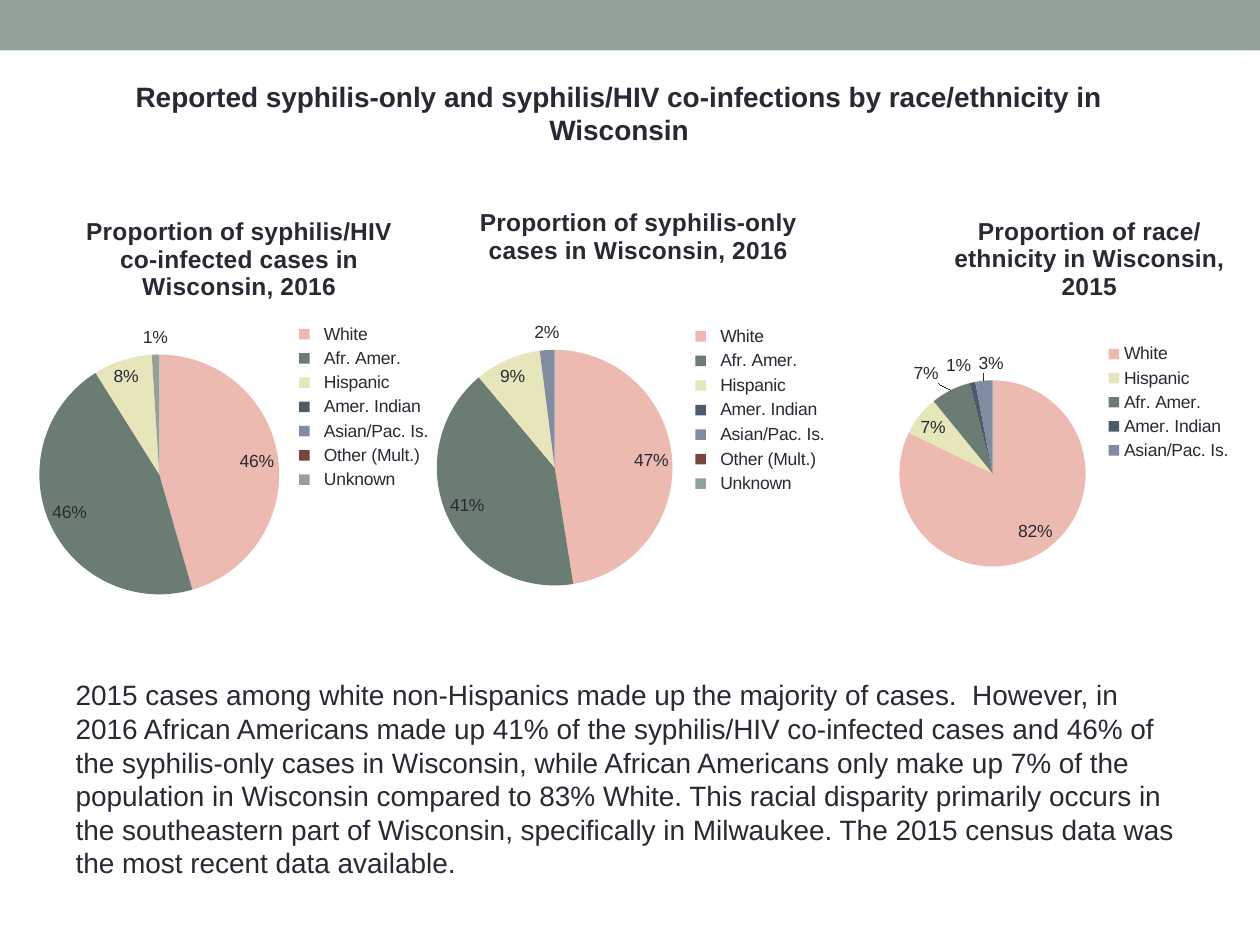
import pptx
import pptx.chart.data
import pptx.dml.color
import pptx.enum.chart
import pptx.enum.shapes
import pptx.enum.text
import pptx.oxml
import pptx.util
from pptx.util import Cm, Pt

FONT = "Arial"
INK = "292934"
SAGE = "93A299"

HEADING = "Reported syphilis-only and syphilis/HIV co-infections by race/ethnicity in Wisconsin"
BODY = (
    "2015 cases among white non-Hispanics made up the majority of cases.  However, in 2016 "
    "African Americans made up 41% of the syphilis/HIV co-infected cases and 46% of the "
    "syphilis-only cases in Wisconsin, while African Americans only make up 7% of the population "
    "in Wisconsin compared to 83% White. This racial disparity primarily occurs in the "
    "southeastern part of Wisconsin, specifically in Milwaukee. The 2015 census data was the "
    "most recent data available."
)

GROUP_COLORS = {
    "White": "EDBAB1",
    "Afr. Amer.": "6B7D72",
    "Hispanic": "E7E5BA",
    "Amer. Indian": "4C5A6A",
    "Asian/Pac. Is. ": "808DA0",
    "Other (Mult.)": "79463D",
    "Unknown": SAGE,
}
CASE_GROUPS = list(GROUP_COLORS)
CENSUS_GROUPS = ["White", "Hispanic", "Afr. Amer.", "Amer. Indian", "Asian/Pac. Is. "]

CHARTS = [
    {
        "title": "Proportion of syphilis/HIV co-infected cases in Wisconsin, 2016",
        "groups": CASE_GROUPS, "indent": "  ", "values": [46, 46, 8, 0, 0, 0, 1],
        "format": "0%;;", "box": (0.43, 3.81, 8.69, 8.79),
        "title_at": (0.14, 0.05), "pie": (0.04, 0.38, 0.56, 0.55),
        "legend": (0.64, 0.3, 0.32, 0.4),
    },
    {
        "title": "Proportion of race/ethnicity in Wisconsin, 2015",
        "groups": CENSUS_GROUPS, "indent": "", "values": [83, 7, 7, 1, 3],
        "format": "0%", "box": (17.35, 3.81, 7.82, 8.69),
        "title_at": (0.23, 0.05), "pie": (0.1, 0.44, 0.48, 0.44),
        "legend": (0.63, 0.35, 0.34, 0.29),
    },
    {
        "title": "Proportion of syphilis-only cases in Wisconsin, 2016",
        "groups": CASE_GROUPS, "indent": "  ", "values": [47, 41, 9, 0, 2, 0, 0],
        "format": "0%", "box": (8.46, 3.81, 8.64, 8.92),
        "title_at": (0.13, 0.03), "pie": (0.04, 0.36, 0.55, 0.54),
        "legend": (0.64, 0.3, 0.32, 0.4),
    },
]


def color(value):
    return pptx.dml.color.RGBColor.from_string(value)


def style_font(font, size, bold=False):
    font.name = FONT
    font.size = Pt(size)
    font.bold = bold
    font.color.rgb = color(INK)


def fill_placeholder(shape, text, box, alignment, bold=False):
    shape.left, shape.top, shape.width, shape.height = map(Cm, box)
    frame = shape.text_frame
    frame.text = text
    frame.word_wrap = True
    frame.auto_size = pptx.enum.text.MSO_AUTO_SIZE.NONE
    frame.vertical_anchor = pptx.enum.text.MSO_ANCHOR.TOP
    paragraph = frame.paragraphs[0]
    paragraph.alignment = alignment
    style_font(paragraph.font, 16, bold)
    return paragraph


def remove_bullet(paragraph):
    properties = paragraph._p.get_or_add_pPr()
    properties.set("marL", "0")
    properties.set("indent", "0")
    properties.insert_element_before(
        pptx.oxml.parse_xml(f"<a:buNone {pptx.oxml.ns.nsdecls('a')}/>"),
        "a:tabLst", "a:defRPr", "a:extLst")


def set_layout(element, fractions, successors, inner=False):
    names = ("x", "y", "w", "h")[:len(fractions)]
    parts = '<c:layoutTarget val="inner"/>' if inner else ""
    parts += "".join(f'<c:{name}Mode val="edge"/>' for name in names[:2])
    parts += "".join(f'<c:{name} val="{value}"/>' for name, value in zip(names, fractions))
    for previous in element.findall(pptx.oxml.ns.qn("c:layout")):
        element.remove(previous)
    layout = pptx.oxml.parse_xml(
        f"<c:layout {pptx.oxml.ns.nsdecls('c')}><c:manualLayout>{parts}</c:manualLayout></c:layout>")
    element.insert_element_before(layout, *successors)


def add_pie(slide, item):
    data = pptx.chart.data.CategoryChartData()
    data.categories = [item["indent"] + group for group in item["groups"]]
    data.add_series("Series 1", item["values"])
    chart = slide.shapes.add_chart(
        pptx.enum.chart.XL_CHART_TYPE.PIE, *map(Cm, item["box"]), data).chart
    style_font(chart.font, 10)

    chart.has_title = True
    title = chart.chart_title
    title.text_frame.text = item["title"]
    style_font(title.text_frame.paragraphs[0].font, 14, bold=True)
    title.include_in_layout = False
    set_layout(title._element, item["title_at"], ("c:overlay", "c:spPr", "c:txPr"))

    chart.has_legend = True
    chart.legend.position = pptx.enum.chart.XL_LEGEND_POSITION.RIGHT
    chart.legend.include_in_layout = False
    style_font(chart.legend.font, 10)
    set_layout(chart.legend._element, item["legend"], ("c:overlay", "c:spPr", "c:txPr"))

    plot = chart.plots[0]
    plot.vary_by_categories = True
    set_layout(chart._chartSpace.chart.plotArea, item["pie"], ("c:pieChart",), inner=True)
    for index, group in enumerate(item["groups"]):
        point_format = plot.series[0].points[index].format
        point_format.fill.solid()
        point_format.fill.fore_color.rgb = color(GROUP_COLORS[group])
        point_format.line.fill.background()

    labels = plot.series[0].data_labels
    labels.show_percentage = True
    labels.show_value = False
    labels.number_format = item["format"]
    labels.number_format_is_linked = False
    labels.position = pptx.enum.chart.XL_LABEL_POSITION.BEST_FIT
    style_font(labels.font, 10)


def main():
    presentation = pptx.Presentation()
    presentation.slide_width = Cm(25.4)
    presentation.slide_height = Cm(19.05)
    slide = presentation.slides.add_slide(presentation.slide_layouts[1])

    band = slide.shapes.add_shape(
        pptx.enum.shapes.MSO_SHAPE.RECTANGLE, 0, 0, presentation.slide_width, Cm(1.02))
    band.shadow.inherit = False
    band.fill.solid()
    band.fill.fore_color.rgb = color(SAGE)
    band.line.fill.background()

    align = pptx.enum.text.PP_ALIGN
    fill_placeholder(slide.shapes.title, HEADING, (1.47, 1.47, 22.02, 1.63), align.CENTER, bold=True)
    body = fill_placeholder(slide.placeholders[1], BODY, (1.27, 13.54, 22.86, 4.45), align.LEFT)
    remove_bullet(body)
    for item in CHARTS:
        add_pie(slide, item)
    presentation.save("out.pptx")


if __name__ == "__main__":
    main()
